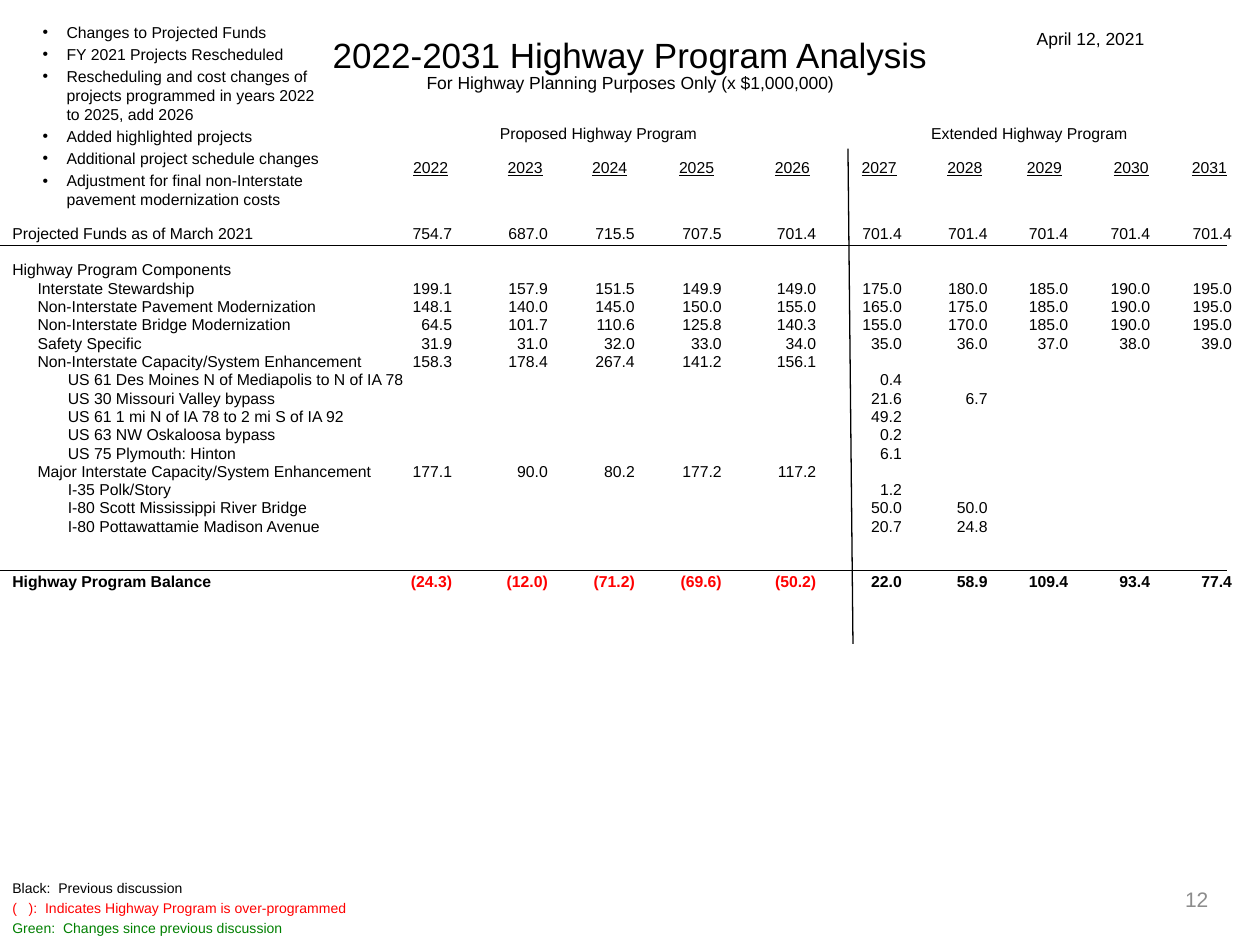
from itertools import groupby

from lxml import etree
from pptx import Presentation
from pptx.dml.color import RGBColor
from pptx.enum.shapes import MSO_CONNECTOR
from pptx.enum.text import MSO_ANCHOR, MSO_AUTO_SIZE, PP_ALIGN
from pptx.oxml.ns import qn
from pptx.util import Inches, Pt

BLACK = RGBColor(0x00, 0x00, 0x00)
RED = RGBColor(0xFF, 0x00, 0x00)
GREEN = RGBColor(0x00, 0x80, 0x00)
GRAY = RGBColor(0x8C, 0x8C, 0x8C)

# Tab stops in inches from the text margin
LABEL_TABS = [(0.2, "l"), (0.44, "l")]
VALUE_TABS = [(x, "r") for x in (3.49, 4.25, 4.94, 5.63, 6.38, 7.06, 7.74, 8.38, 9.03, 9.68)]
YEAR_TABS = [(x, "ctr") for x in (3.32, 4.07, 4.74, 5.43, 6.19, 6.88, 7.56, 8.19, 8.88, 9.5)]
GROUP_TABS = [(4.65, "ctr"), (8.07, "ctr")]
LINE = 10.45  # line pitch of the figures, points

# Indent level, label, values from 2022 on (blank where nothing is programmed)
ROWS = [
    (0, "Projected Funds as of March 2021",
     "754.7 687.0 715.5 707.5 701.4 701.4 701.4 701.4 701.4 701.4".split()),
    (0, "Highway Program Components", []),
    (1, "Interstate Stewardship",
     "199.1 157.9 151.5 149.9 149.0 175.0 180.0 185.0 190.0 195.0".split()),
    (1, "Non-Interstate Pavement Modernization",
     "148.1 140.0 145.0 150.0 155.0 165.0 175.0 185.0 190.0 195.0".split()),
    (1, "Non-Interstate Bridge Modernization",
     "64.5 101.7 110.6 125.8 140.3 155.0 170.0 185.0 190.0 195.0".split()),
    (1, "Safety Specific", "31.9 31.0 32.0 33.0 34.0 35.0 36.0 37.0 38.0 39.0".split()),
    (1, "Non-Interstate Capacity/System Enhancement", "158.3 178.4 267.4 141.2 156.1".split()),
    (2, "US 61 Des Moines N of Mediapolis to N of IA 78", [""] * 5 + ["0.4"]),
    (2, "US 30 Missouri Valley bypass", [""] * 5 + ["21.6", "6.7"]),
    (2, "US 61 1 mi N of IA 78 to 2 mi S of IA 92", [""] * 5 + ["49.2"]),
    (2, "US 63 NW Oskaloosa bypass", [""] * 5 + ["0.2"]),
    (2, "US 75 Plymouth: Hinton", [""] * 5 + ["6.1"]),
    (1, "Major Interstate Capacity/System Enhancement", "177.1 90.0 80.2 177.2 117.2".split()),
    (2, "I-35 Polk/Story", [""] * 5 + ["1.2"]),
    (2, "I-80 Scott Mississippi River Bridge", [""] * 5 + ["50.0", "50.0"]),
    (2, "I-80 Pottawattamie Madison Avenue", [""] * 5 + ["20.7", "24.8"]),
    (0, "Highway Program Balance",
     "(24.3) (12.0) (71.2) (69.6) (50.2) 22.0 58.9 109.4 93.4 77.4".split()),
]
# Extra space above the rows that open a section, in line pitches
SECTION_GAPS = {"Highway Program Components": 1, "Highway Program Balance": 2}

CHANGES = [
    "Changes to Projected Funds",
    "FY 2021 Projects Rescheduled",
    "Rescheduling and cost changes of projects programmed in years 2022 to 2025, add 2026",
    "Added highlighted projects",
    "Additional project schedule changes",
    "Adjustment for final non-Interstate pavement modernization costs",
]
LEGEND = [
    ("Black:  Previous discussion", BLACK),
    ("(   ):  Indicates Highway Program is over-programmed", RED),
    ("Green:  Changes since previous discussion", GREEN),
]


def format_frame(shape, top_inset, anchor=MSO_ANCHOR.TOP):
    frame = shape.text_frame
    settings = {"word_wrap": True, "auto_size": MSO_AUTO_SIZE.NONE, "vertical_anchor": anchor,
                "margin_left": Inches(0.1), "margin_right": Inches(0.1),
                "margin_top": Inches(top_inset), "margin_bottom": 0}
    for name, value in settings.items():
        setattr(frame, name, value)
    return frame


def add_text_box(slide, left, top, width, height, top_inset=0.05, anchor=MSO_ANCHOR.TOP):
    box = slide.shapes.add_textbox(Inches(left), Inches(top), Inches(width), Inches(height))
    return format_frame(box, top_inset, anchor)


def add_paragraph(frame, **formats):
    """Use the empty first paragraph, or append one, and apply its formats."""
    first = frame.paragraphs[0]
    paragraph = frame.add_paragraph() if first.runs else first
    for name, value in formats.items():
        setattr(paragraph, name, value)
    return paragraph


def add_run(paragraph, text, size=9, color=BLACK, **formats):
    run = paragraph.add_run()
    run.text = text
    for name, value in {"name": "Arial", "size": Pt(size), **formats}.items():
        setattr(run.font, name, value)
    run.font.color.rgb = color


def set_tabs(paragraph, stops):
    tab_list = etree.SubElement(paragraph._p.get_or_add_pPr(), qn("a:tabLst"))
    for position, alignment in stops:
        etree.SubElement(tab_list, qn("a:tab"), pos=str(Inches(position)), algn=alignment)


def set_bullet(paragraph, indent):
    properties = paragraph._p.get_or_add_pPr()
    properties.set("marL", str(Inches(indent)))
    properties.set("indent", str(-Inches(indent)))
    etree.SubElement(properties, qn("a:buFont"), typeface="Arial")
    etree.SubElement(properties, qn("a:buChar"), char="•")


def add_line(slide, start, end):
    line = slide.shapes.add_connector(MSO_CONNECTOR.STRAIGHT, *map(Inches, start + end))
    line.line.color.rgb = BLACK
    line.line.width = Pt(0.75)
    etree.SubElement(line._element.spPr, qn("a:effectLst"))


def add_title(slide):
    title = slide.shapes.title
    for name, value in {"left": 0, "top": 0.05, "width": 10, "height": 0.7}.items():
        setattr(title, name, Inches(value))
    frame = format_frame(title, 0.23)
    for text, size, pitch in (("2022-2031 Highway Program Analysis", 20, 23),
                              ("For Highway Planning Purposes Only (x $1,000,000)", 10, 10)):
        paragraph = add_paragraph(frame, alignment=PP_ALIGN.CENTER,
                                  line_spacing=Pt(pitch), space_before=Pt(0))
        add_run(paragraph, text, size)


def add_program_rows(slide):
    frame = add_text_box(slide, 0, 1.57, 10, 3.37, top_inset=0.21)
    for level, label, values in ROWS:
        paragraph = add_paragraph(frame, line_spacing=Pt(LINE),
                                  space_before=Pt(LINE * SECTION_GAPS.get(label, 0)))
        set_tabs(paragraph, LABEL_TABS[:level] + VALUE_TABS)
        bold = label == "Highway Program Balance"
        cells = ["\t" * level + label] + ["\t" + value for value in values]
        # Over-programmed years, shown in parentheses, are red
        for negative, group in groupby(cells, key=lambda cell: "(" in cell):
            add_run(paragraph, "".join(group), color=RED if negative else BLACK, bold=bold)


def add_column_heads(slide):
    frame = add_text_box(slide, 0, 0.99, 10, 0.49, top_inset=0)
    groups = add_paragraph(frame, line_spacing=Pt(LINE))
    set_tabs(groups, GROUP_TABS)
    add_run(groups, "\tProposed Highway Program\tExtended Highway Program")
    years = add_paragraph(frame, line_spacing=Pt(LINE), space_before=Pt(9))
    set_tabs(years, YEAR_TABS)
    for year in range(2022, 2032):
        add_run(years, "\t")
        add_run(years, str(year), underline=True)


def main():
    presentation = Presentation()
    presentation.slide_width, presentation.slide_height = Inches(10), Inches(7.5)
    slide = presentation.slides.add_slide(presentation.slide_layouts[5])

    # Figures and their heads
    add_program_rows(slide)
    add_column_heads(slide)
    add_title(slide)

    # Rules under the funds, between the programs and above the balance
    add_line(slide, (0, 1.95), (9.74, 1.95))
    add_line(slide, (6.77, 5.11), (6.73, 1.18))
    add_line(slide, (0, 4.53), (9.74, 4.53))

    # Slide number
    frame = add_text_box(slide, 7.36, 6.94, 2.33, 0.4, top_inset=0, anchor=MSO_ANCHOR.MIDDLE)
    add_run(add_paragraph(frame, alignment=PP_ALIGN.RIGHT), "12", 12, GRAY)

    # Colour legend
    frame = add_text_box(slide, 0, 6.93, 3.83, 0.56)
    for index, (text, color) in enumerate(LEGEND):
        add_run(add_paragraph(frame, space_before=Pt(1.8 if index else 0)), text, 8, color)

    # Date
    frame = add_text_box(slide, 7.54, 0.17, 2.23, 0.27)
    add_run(add_paragraph(frame, alignment=PP_ALIGN.CENTER), "April 12, 2021", 10)

    # List of changes
    frame = add_text_box(slide, 0.24, 0.12, 2.47, 1.98, top_inset=0.06)
    for index, text in enumerate(CHANGES):
        paragraph = add_paragraph(frame, line_spacing=Pt(10.85),
                                  space_before=Pt(1.75 if index else 0))
        set_bullet(paragraph, 0.19)
        add_run(paragraph, text)

    presentation.save("out.pptx")


if __name__ == "__main__":
    main()
